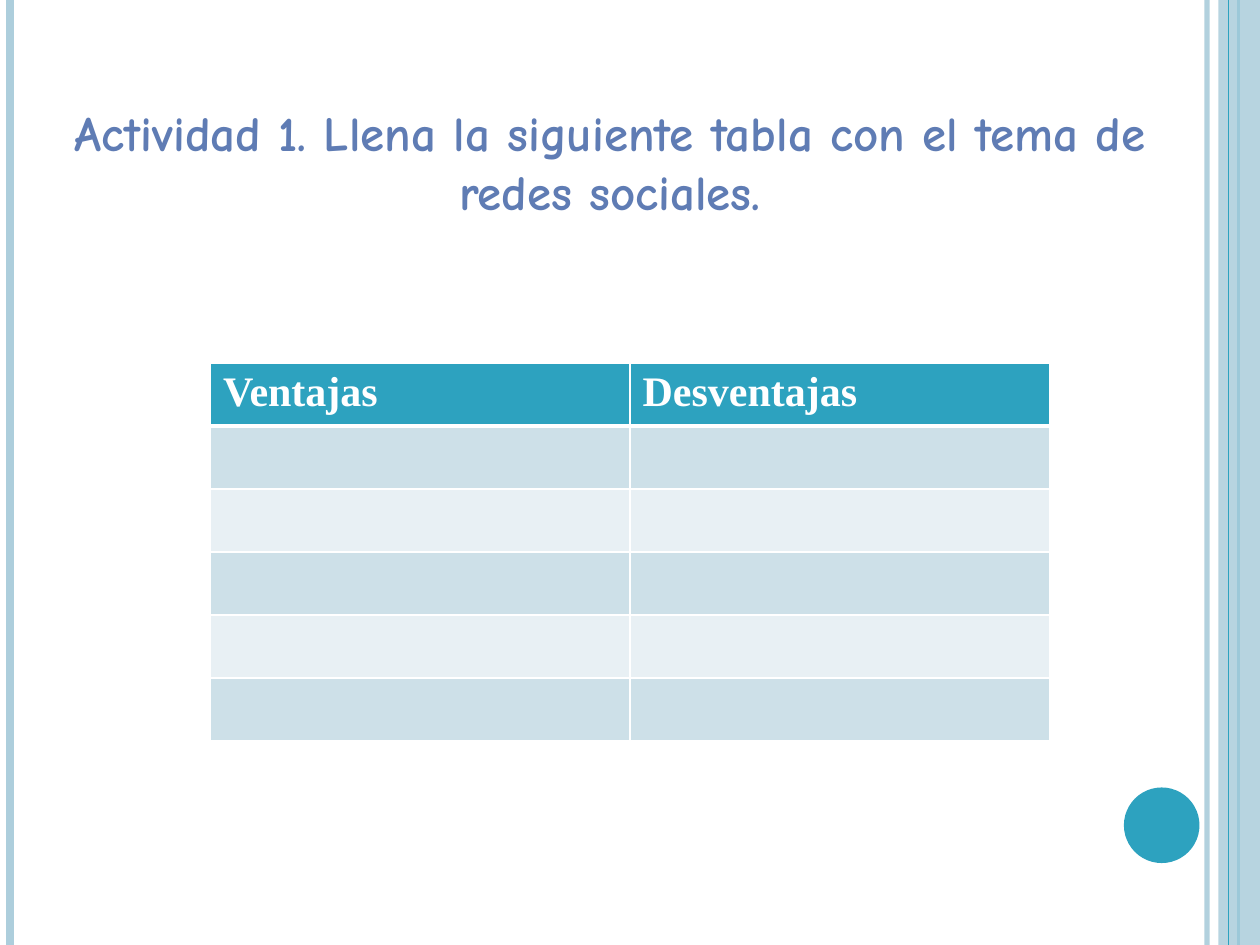
"""Build the activity slide with a two-column table on social networks."""
from lxml import etree
from pptx import Presentation
from pptx.dml.color import RGBColor
from pptx.enum.shapes import MSO_CONNECTOR, MSO_SHAPE
from pptx.enum.text import MSO_ANCHOR, PP_ALIGN
from pptx.oxml.ns import qn
from pptx.util import Inches, Pt

STRAIGHT = MSO_CONNECTOR.STRAIGHT
RECTANGLE, OVAL = MSO_SHAPE.RECTANGLE, MSO_SHAPE.OVAL
CENTER, MIDDLE = PP_ALIGN.CENTER, MSO_ANCHOR.MIDDLE

WIDTH, HEIGHT = 10, 7.5
TEAL, PALE, WHITE, BLUE = "2DA2BF", "ADCEDC", "FFFFFF", "5F7CB4"
BANDS = ["CDE0E8", "E8F0F4"]

TITLE = "Actividad 1. Llena la siguiente tabla con el tema de redes sociales."
HEADERS = ["Ventajas", "Desventajas"]
EMPTY_ROWS = 5
ROW_HEIGHT = 0.5
TABLE_LEFT, TABLE_TOP, TABLE_WIDTH = 1.67, 2.88, 6.66

LINES_BEHIND = [(9.58, PALE, 3, 93), (0.08, PALE, 4.5, 100), (9.83, TEAL, 1.5, 100)]
LINES_FRONT = [(9.75, TEAL, 0.75, 100)]


def rgb(color):
    return RGBColor.from_string(color)


def set_opacity(element, percent):
    color = next(element.iter(qn("a:srgbClr")))
    etree.SubElement(color, qn("a:alpha"), val=str(percent * 1000))


def add_vertical_line(page, x, color, width, opacity):
    line = page.shapes.add_connector(STRAIGHT, Inches(x), 0, Inches(x), Inches(HEIGHT))
    line.line.color.rgb = rgb(color)
    line.line.width = Pt(width)
    if opacity < 100:
        set_opacity(line.line._get_or_add_ln(), opacity)
    etree.SubElement(line._element.spPr, qn("a:effectLst"))


def add_plain_shape(page, kind, color, *place):
    shape = page.shapes.add_shape(kind, *map(Inches, place))
    shape.shadow.inherit = False
    shape.fill.solid()
    shape.fill.fore_color.rgb = rgb(color)
    shape.line.fill.background()
    return shape


def add_span(para, text, font, size, color):
    span = para.add_run()
    span.text = text
    span.font.name, span.font.size, span.font.bold = font, Pt(size), True
    span.font.color.rgb = rgb(color)


def add_title(page):
    box = page.shapes.add_textbox(*map(Inches, (0.43, 0.76, 8.82, 1.04)))
    frame = box.text_frame
    frame.word_wrap = True
    frame.vertical_anchor = MIDDLE
    para = frame.paragraphs[0]
    para.alignment = CENTER
    add_span(para, TITLE, "Comic Neue", 28, BLUE)


def set_borders(cell, widths):
    properties = cell._tc.get_or_add_tcPr()
    for index, (side, width) in enumerate(widths.items()):
        border = etree.Element(qn(f"a:ln{side}"), w=str(Pt(width)))
        fill = etree.SubElement(border, qn("a:solidFill"))
        etree.SubElement(fill, qn("a:srgbClr"), val=WHITE)
        properties.insert(index, border)


def add_comparison_table(page):
    row_count, column_count = EMPTY_ROWS + 1, len(HEADERS)
    place = (TABLE_LEFT, TABLE_TOP, TABLE_WIDTH, row_count * ROW_HEIGHT)
    table = page.shapes.add_table(row_count, column_count, *map(Inches, place)).table
    for row in range(row_count):
        for column, header in enumerate(HEADERS):
            cell = table.cell(row, column)
            cell.fill.solid()
            cell.fill.fore_color.rgb = rgb(BANDS[(row - 1) % 2] if row else TEAL)
            top, bottom = (3 if row == 1 else 1), (1 if row else 3)
            set_borders(cell, {"L": 1, "R": 1, "T": top, "B": bottom})
            if row == 0:
                add_span(cell.text_frame.paragraphs[0], header, "Times New Roman", 24, WHITE)


def main():
    deck = Presentation()
    deck.slide_width, deck.slide_height = Inches(WIDTH), Inches(HEIGHT)
    page = deck.slides.add_slide(deck.slide_layouts[6])
    for line in LINES_BEHIND:
        add_vertical_line(page, *line)
    side_band = add_plain_shape(page, RECTANGLE, PALE, 9.67, 0, 0.33, HEIGHT)
    set_opacity(side_band._element.spPr, 87)
    for line in LINES_FRONT:
        add_vertical_line(page, *line)
    add_plain_shape(page, OVAL, TEAL, 8.92, 6.25, 0.6, 0.6)
    add_title(page)
    add_comparison_table(page)
    deck.save("out.pptx")


if __name__ == "__main__":
    main()
